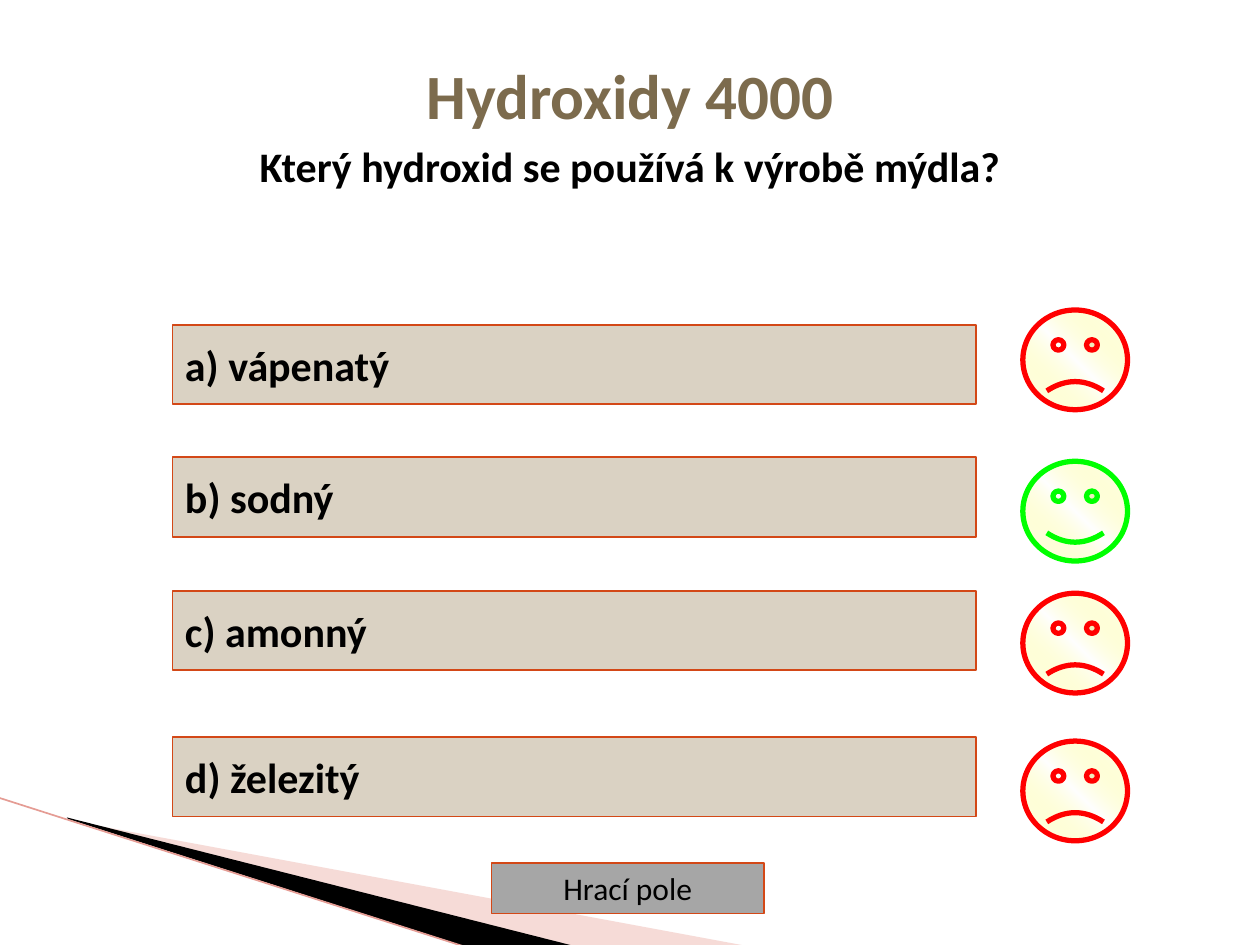
from pptx import Presentation
from pptx.dml.color import RGBColor
from pptx.enum.shapes import MSO_CONNECTOR, MSO_SHAPE
from pptx.enum.text import MSO_ANCHOR, MSO_AUTO_SIZE, PP_ALIGN
from pptx.oxml import parse_xml
from pptx.oxml.ns import nsdecls, qn
from pptx.util import Cm, Pt
from lxml import etree

BUTTON = MSO_SHAPE.ACTION_BUTTON_CUSTOM
SMILEY = MSO_SHAPE.SMILEY_FACE
LEFT, CENTER = PP_ALIGN.LEFT, PP_ALIGN.CENTER
FONT = "Calibri"
BLACK = RGBColor(0x00, 0x00, 0x00)
BROWN = RGBColor(0x7C, 0x6B, 0x4D)
SAND = RGBColor(0xDA, 0xD2, 0xC3)
GREY = RGBColor(0xA6, 0xA6, 0xA6)
RUST = RGBColor(0xD3, 0x48, 0x17)
PINK = RGBColor(0xE9, 0xA5, 0x9D)
ROSE = RGBColor(0xE5, 0x9C, 0x94)
RED = RGBColor(0xFF, 0x00, 0x00)
GREEN = RGBColor(0x00, 0xFF, 0x00)

# text, top of the bar, top of the face, right answer
ANSWERS = [
    ("a) vápenatý", 6.55, 6.25, False),
    ("b) sodný", 9.22, 9.3, True),
    ("c) amonný", 11.91, 11.96, False),
    ("d) železitý", 14.86, 14.94, False),
]

GLOW = f"""<a:gradFill {nsdecls('a')} rotWithShape="1"><a:gsLst>
<a:gs pos="0"><a:srgbClr val="FFFFFF"/></a:gs>
<a:gs pos="50000"><a:srgbClr val="FFFF66"><a:alpha val="0"/></a:srgbClr></a:gs>
<a:gs pos="100000"><a:srgbClr val="FFFFFF"/></a:gs>
</a:gsLst><a:lin ang="18900000" scaled="1"/></a:gradFill>"""


def add_run(para, text, size, color, bold):
    run = para.add_run()
    run.text = text
    font = run.font
    font.name, font.size, font.bold = FONT, Pt(size), bold
    font.color.rgb = color


def add_title(slide):
    title = slide.shapes.title
    title.left, title.top = Cm(1), Cm(1.02)
    title.width, title.height = Cm(23.4), Cm(1.9)
    frame = title.text_frame
    frame.word_wrap = True
    frame.auto_size = MSO_AUTO_SIZE.NONE
    frame.vertical_anchor = MSO_ANCHOR.TOP
    head, quest = frame.paragraphs[0], frame.add_paragraph()
    for para in (head, quest):
        para.alignment = CENTER
        para.line_spacing = 1.0
    head.space_before = Pt(0)
    quest.space_before = Pt(4.8)
    add_run(head, "Hydroxidy 4000", 36, BROWN, True)
    add_run(quest, "Který hydroxid se používá k výrobě mýdla?", 24, BLACK, True)


def add_wedge(slide, points, color, alpha=100):
    """Add a filled corner wedge; points in cm, alpha in percent."""
    spots = [(Cm(x), Cm(y)) for x, y in points]
    form = slide.shapes.build_freeform(*spots[0])
    form.add_line_segments(spots[1:], close=True)
    wedge = form.convert_to_shape()
    wedge.shadow.inherit = False
    wedge.fill.solid()
    wedge.fill.fore_color.rgb = color
    wedge.line.fill.background()
    if alpha < 100:
        tone = wedge.fill._xPr.find(".//" + qn("a:srgbClr"))
        etree.SubElement(tone, qn("a:alpha")).set("val", str(alpha * 1000))


def add_edge(slide, start, end):
    ends = [Cm(v) for v in start + end]
    edge = slide.shapes.add_connector(MSO_CONNECTOR.STRAIGHT, *ends)
    edge.line.color.rgb = ROSE
    edge.line.width = Pt(0.95)
    etree.SubElement(edge._element.spPr, qn("a:effectLst"))


def add_button(slide, box, text, size, fill, line, align, bold):
    button = slide.shapes.add_shape(BUTTON, *[Cm(v) for v in box])
    button.shadow.inherit = False
    button.fill.solid()
    button.fill.fore_color.rgb = fill
    button.line.color.rgb = RUST
    button.line.width = Pt(line)
    frame = button.text_frame
    frame.word_wrap = False
    frame.vertical_anchor = MSO_ANCHOR.MIDDLE
    para = frame.paragraphs[0]
    para.alignment = align
    add_run(para, text, size, BLACK, bold)


def add_face(slide, top, right):
    face = slide.shapes.add_shape(SMILEY, Cm(20.62), Cm(top), Cm(2.11), Cm(2.01))
    face.shadow.inherit = False
    face.adjustments[0] = 0.047 if right else -0.047
    face.fill.solid()
    props = face._element.spPr
    props.replace(props.find(qn("a:solidFill")), parse_xml(GLOW))
    face.line.color.rgb = GREEN if right else RED
    face.line.width = Pt(3)


def main():
    deck = Presentation()
    deck.slide_width, deck.slide_height = Cm(25.4), Cm(19.05)
    slide = deck.slides.add_slide(deck.slide_layouts[5])
    add_wedge(slide, [(1.4, 16.54), (15.11, 19.08), (11.58, 19.08), (1.4, 16.51)],
              PINK, 40)
    add_wedge(slide, [(1.35, 16.48), (11.61, 19.08), (9.45, 19.1), (1.37, 16.51)],
              BLACK)
    add_edge(slide, (-0.03, 16.08), (9.42, 19.1))
    add_title(slide)
    add_button(slide, (9.91, 17.4, 5.49, 1.02), "Hrací pole", 18, GREY, 0.75,
               CENTER, False)
    for text, top, peak, right in ANSWERS:
        add_button(slide, (3.48, top, 16.19, 1.6), text, 24, SAND, 1, LEFT, True)
        add_face(slide, peak, right)
    deck.save("out.pptx")


if __name__ == "__main__":
    main()
